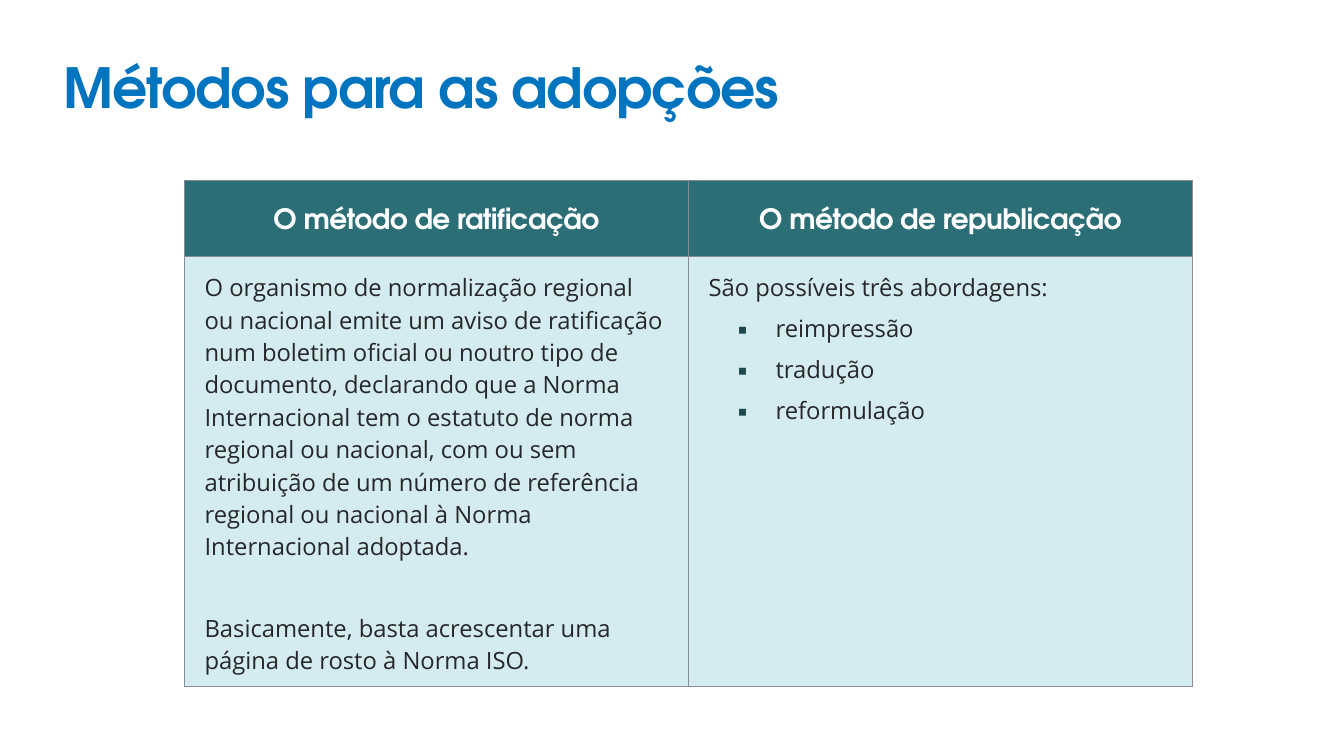
from lxml.etree import SubElement as Sub
from pptx import Presentation
from pptx.dml.color import RGBColor
from pptx.enum.text import MSO_ANCHOR as Anchor, MSO_AUTO_SIZE as Fit, PP_ALIGN as Align
from pptx.oxml import parse_xml
from pptx.oxml.ns import nsdecls, qn
from pptx.util import Pt

BLUE = RGBColor(0x00, 0x74, 0xBF)
TEAL = RGBColor(0x2B, 0x6E, 0x76)
PALE = RGBColor(0xD4, 0xEC, 0xEF)
DARK = RGBColor(0x1C, 0x49, 0x4E)
INK = RGBColor(0x25, 0x27, 0x2B)
GREY = RGBColor(0x87, 0x8D, 0x97)
WHITE = RGBColor(0xFF, 0xFF, 0xFF)
HEAD, BODY = "TeX Gyre Adventor", "Open Sans"


def add_run(para, text, face, size, color, bold=False, track=0):
    run = para.add_run()
    run.text = text
    font = run.font
    font.name, font.size, font.bold = face, Pt(size), bold
    font.color.rgb = color
    run._r.get_or_add_rPr().set("spc", str(track))


def style_cell(cell, fill):
    props = cell._tc.get_or_add_tcPr()
    for side in ("lnL", "lnR", "lnT", "lnB"):
        props.append(parse_xml(
            f'<a:{side} {nsdecls("a")} w="{Pt(1)}"><a:solidFill>'
            f'<a:srgbClr val="{GREY}"/></a:solidFill></a:{side}>'))
    cell.fill.solid()
    cell.fill.fore_color.rgb = fill


prs = Presentation()
prs.slide_width, prs.slide_height = Pt(1920.24), Pt(1080)
slide = prs.slides.add_slide(prs.slide_layouts[5])

# Title
title = slide.shapes.title
title.left, title.top, title.width, title.height = Pt(83.5), Pt(57.6), Pt(1800), Pt(113)
frame = title.text_frame
frame.word_wrap = True
frame.auto_size = Fit.SHAPE_TO_FIT_TEXT
frame.vertical_anchor = Anchor.MIDDLE
para = frame.paragraphs[0]
para.alignment = Align.LEFT
para.line_spacing = 1.2
add_run(para, "Métodos para as adopções", HEAD, 79, BLUE, True, -160)

# Table
table = slide.shapes.add_table(2, 2, Pt(263.5), Pt(257), Pt(1440), Pt(723.6)).table
for row, high in zip(table.rows, (109.4, 614.2)):
    row.height = Pt(high)

# Header row
heads = ("O método de ratificação", "O método de republicação")
for col, text in enumerate(heads):
    cell = table.cell(0, col)
    style_cell(cell, TEAL)
    cell.vertical_anchor = Anchor.MIDDLE
    para = cell.text_frame.paragraphs[0]
    para.alignment = Align.CENTER
    para.line_spacing = 1.3
    add_run(para, text, HEAD, 40, WHITE, True, -70)

# Body row: text, space before, bullet
bodies = (
    (("O organismo de normalização regional ou nacional emite um aviso de "
      "ratificação num boletim oficial ou noutro tipo de documento, declarando "
      "que a Norma Internacional tem o estatuto de norma regional ou nacional, "
      "com ou sem atribuição de um número de referência regional ou nacional à "
      "Norma Internacional adoptada.", 0, False),
     ("Basicamente, basta acrescentar uma página de rosto à Norma ISO.", 58, False)),
    (("São possíveis três abordagens:", 0, False),
     ("reimpressão", 0, True),
     ("tradução", 0, True),
     ("reformulação", 0, True)),
)
for col, items in enumerate(bodies):
    cell = table.cell(1, col)
    style_cell(cell, PALE)
    cell.margin_left = cell.margin_right = Pt(28.8)
    cell.margin_top, cell.margin_bottom = Pt(21.6), Pt(10.8)
    frame = cell.text_frame
    for num, (text, gap, bullet) in enumerate(items):
        para = frame.add_paragraph() if num else frame.paragraphs[0]
        para.space_before, para.space_after = Pt(gap), Pt(12)
        if bullet:
            props = para._p.get_or_add_pPr()
            props.set("marL", str(Pt(95.8)))
            props.set("indent", str(Pt(-54)))
            Sub(Sub(props, qn("a:buClr")), qn("a:srgbClr"), val=str(DARK))
            Sub(props, qn("a:buFont"), typeface=BODY)
            Sub(props, qn("a:buChar"), char="▪")
        add_run(para, text, BODY, 34, INK)

prs.save("out.pptx")
